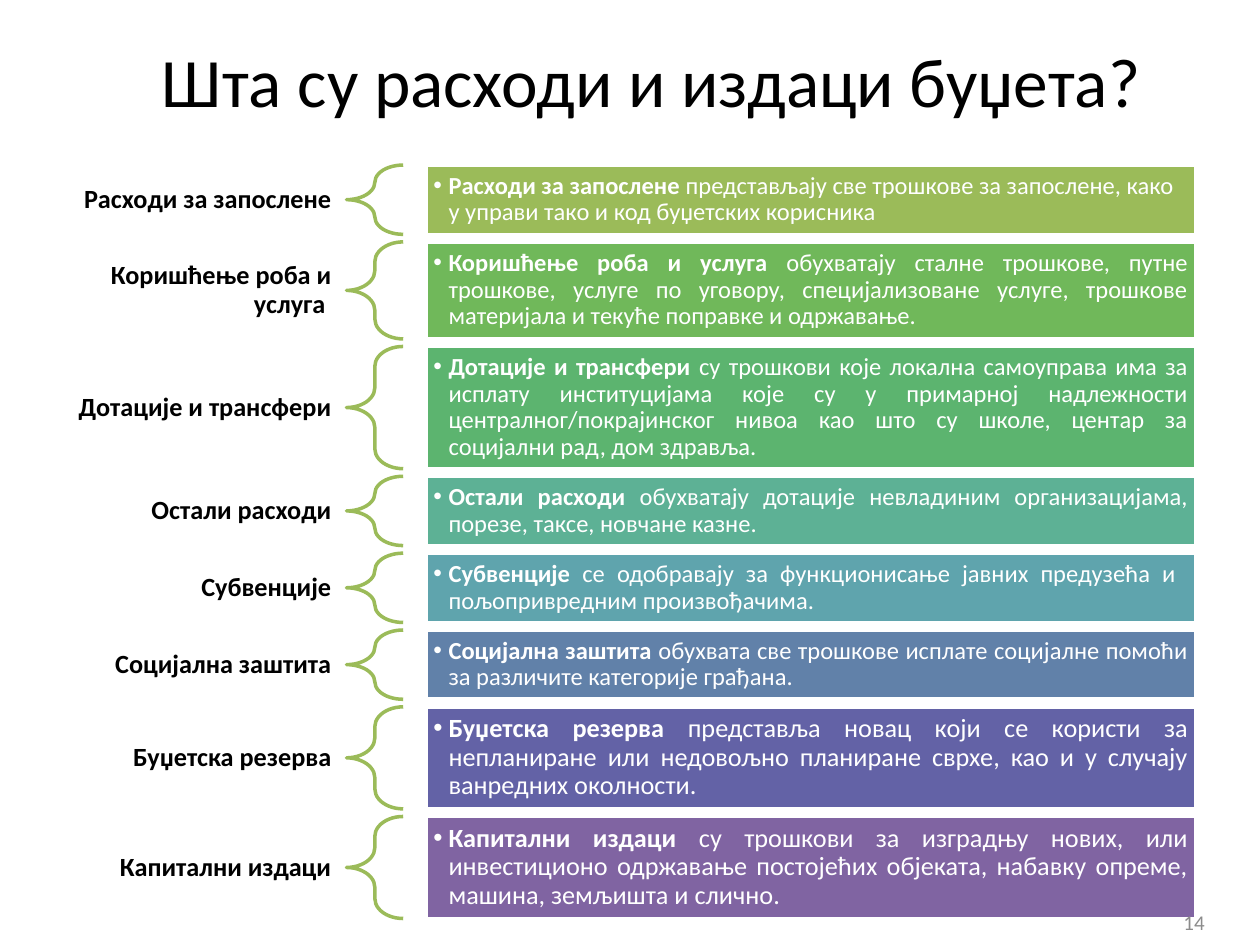
from lxml.etree import SubElement
from pptx import Presentation
from pptx.dml.color import RGBColor
from pptx.enum.shapes import MSO_SHAPE
from pptx.enum.text import MSO_ANCHOR, PP_ALIGN
from pptx.oxml.ns import qn
from pptx.util import Inches, Pt

# label, label lines, bold lead, description, bar height, text size, colour, alignment
ROWS = [
    ("Расходи за запослене", 1, "Расходи за запослене ",
     "представљају све трошкове за запослене, како у управи тако и код буџетских корисника",
     0.55, 14, "9BBB59", PP_ALIGN.LEFT),
    ("Коришћење роба и услуга ", 2, "Коришћење роба и услуга ",
     "обухватају сталне трошкове, путне трошкове, услуге по уговору, специјализоване услуге, "
     "трошкове материјала и текуће поправке и одржавање.",
     0.77, 14, "70B85A", PP_ALIGN.JUSTIFY),
    ("Дотације и трансфери", 1, "Дотације и трансфери ",
     "су трошкови које локална самоуправа има за исплату институцијама које су у примарној "
     "надлежности централног/покрајинског нивоа као што су школе, центар за социјални рад, "
     "дом здравља. ",
     0.97, 14, "5CB46F", PP_ALIGN.JUSTIFY),
    ("Остали расходи", 1, "Остали расходи ",
     "обухватају дотације невладиним организацијама, порезе, таксе, новчане казне.",
     0.55, 14, "5DB195", PP_ALIGN.JUSTIFY),
    ("Субвенције", 1, "Субвенције",
     " сe одобравају за функционисање јавних предузећа и  пољопривредним произвођачима. ",
     0.55, 14, "5FA4AD", PP_ALIGN.JUSTIFY),
    ("Социјална заштита", 1, "Социјална заштита ",
     "обухвата све трошкове исплате социјалне помоћи за различите категорије грађана.",
     0.55, 14, "6181A9", PP_ALIGN.JUSTIFY),
    ("Буџетска резерва", 1, "Буџетска резерва ",
     "представља новац који се користи за непланиране или недовољно планиране сврхе, "
     "као и у случају ванредних околности.",
     0.81, 15, "6362A6", PP_ALIGN.JUSTIFY),
    ("Капитални издаци", 1, "Капитални издаци ",
     "су трошкови за изградњу нових, или инвестиционо одржавање постојећих објеката, "
     "набавку опреме, машина, земљишта и слично.",
     0.81, 15, "8064A2", PP_ALIGN.JUSTIFY),
]
FIRST_TOP = 1.31
ROW_GAP = 0.06
LABEL_HEIGHTS = {1: 0.32, 2: 0.55}


def colour(hex_value):
    return RGBColor.from_string(hex_value)


class SlideBuilder:
    font = "Calibri"
    brace_colour = "9BBB59"
    line_width = Pt(2)

    def __init__(self, slide):
        self.slide = slide

    def add_run(self, paragraph, text, size, hex_value, bold=False):
        run = paragraph.add_run()
        run.text = text
        run.font.name = self.font
        run.font.size = Pt(size)
        run.font.bold = bold
        run.font.color.rgb = colour(hex_value)

    def prepare_frame(self, shape, alignment, horizontal=0.1, vertical=0.05):
        """Set wrapping, anchor and insets; return the first paragraph."""
        frame = shape.text_frame
        frame.word_wrap = True
        frame.vertical_anchor = MSO_ANCHOR.MIDDLE
        frame.margin_left = frame.margin_right = Inches(horizontal)
        frame.margin_top = frame.margin_bottom = Inches(vertical)
        paragraph = frame.paragraphs[0]
        paragraph.alignment = alignment
        return paragraph

    def add_text(self, text, left, top, width, height, size, hex_value, alignment):
        box = self.slide.shapes.add_textbox(
            Inches(left), Inches(top), Inches(width), Inches(height))
        paragraph = self.prepare_frame(box, alignment)
        self.add_run(paragraph, text, size, hex_value)

    def add_label(self, text, middle, height):
        box = self.slide.shapes.add_textbox(
            Inches(0.5), Inches(middle - height / 2), Inches(2.25), Inches(height))
        paragraph = self.prepare_frame(box, PP_ALIGN.RIGHT, 0.12, 0.04)
        paragraph.line_spacing = 0.9
        self.add_run(paragraph, text, 15, "000000", bold=True)

    def add_outlined_shape(self, kind, left, top, width, height, line):
        shape = self.slide.shapes.add_shape(
            kind, Inches(left), Inches(top), Inches(width), Inches(height))
        shape.shadow.inherit = False
        shape.line.color.rgb = colour(line)
        shape.line.width = self.line_width
        return shape

    def add_brace(self, top, height):
        brace = self.add_outlined_shape(
            MSO_SHAPE.LEFT_BRACE, 2.75, top, 0.45, height, self.brace_colour)
        brace.fill.background()
        brace.adjustments[0] = 0.35
        brace.adjustments[1] = 0.5

    def add_bar(self, lead, description, top, height, size, fill, alignment):
        bar = self.add_outlined_shape(
            MSO_SHAPE.RECTANGLE, 3.38, top, 6.11, height, "FFFFFF")
        bar.fill.solid()
        bar.fill.fore_color.rgb = colour(fill)
        paragraph = self.prepare_frame(bar, alignment, 0.06, 0.06)
        paragraph.level = 1
        paragraph.line_spacing = 0.9
        self.add_bullet(paragraph)
        self.add_run(paragraph, lead, size, "FFFFFF", bold=True)
        self.add_run(paragraph, description, size, "FFFFFF")

    def add_bullet(self, paragraph):
        properties = paragraph._p.get_or_add_pPr()
        properties.set("marL", str(Inches(0.12)))
        properties.set("indent", str(Inches(-0.12)))
        SubElement(properties, qn("a:buFont"), typeface="Arial")
        SubElement(properties, qn("a:buChar"), char="•")


def main():
    presentation = Presentation()
    presentation.slide_width = Inches(10)
    presentation.slide_height = Inches(7.5)
    builder = SlideBuilder(presentation.slides.add_slide(presentation.slide_layouts[6]))

    builder.add_text("Шта су расходи и издаци буџета?", 0.67, 0.29, 9, 0.68,
                     39.6, "000000", PP_ALIGN.CENTER)
    top = FIRST_TOP
    for label, lines, lead, description, height, size, fill, alignment in ROWS:
        builder.add_label(label, top + height / 2, LABEL_HEIGHTS[lines])
        builder.add_brace(top, height)
        builder.add_bar(lead, description, top, height, size, fill, alignment)
        top += height + ROW_GAP
    builder.add_text("14", 7.33, 7.12, 2.33, 0.4, 12, "8C8C8C", PP_ALIGN.RIGHT)

    presentation.save("out.pptx")


if __name__ == "__main__":
    main()
